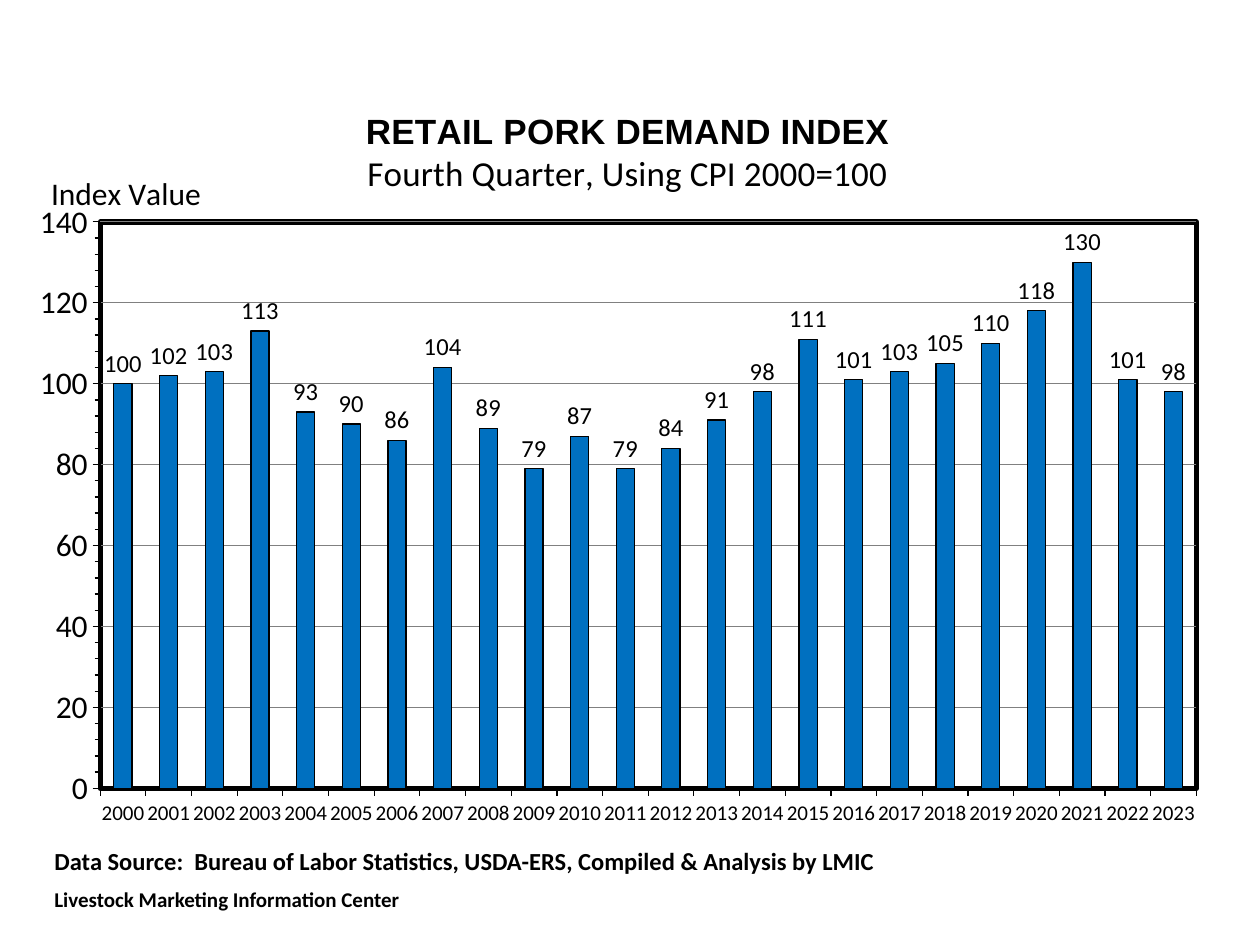
from pptx import Presentation
from pptx.chart.data import CategoryChartData as Data
from pptx.dml.color import RGBColor
from pptx.enum.chart import XL_CHART_TYPE as Kind, XL_LABEL_POSITION as Place, XL_TICK_MARK as Tick
from pptx.enum.text import MSO_AUTO_SIZE as Fit
from pptx.oxml import parse_xml
from pptx.oxml.ns import nsdecls
from pptx.util import Pt

BLACK = RGBColor(0, 0, 0)
WHITE = RGBColor(255, 255, 255)
GRAY = RGBColor(128, 128, 128)
BLUE = RGBColor(0, 112, 192)

YEARS = [str(year) for year in range(2000, 2024)]
INDEX = [100, 102, 103, 113, 93, 90, 86, 104, 89, 79, 87, 79,
         84, 91, 98, 111, 101, 103, 105, 110, 118, 130, 101, 98]


def write(para, text, size=18, face="Calibri", bold=False, before=0):
    para.space_before = Pt(before)
    run = para.add_run()
    run.text = text
    font = run.font
    font.size, font.name, font.bold = Pt(size), face, bold
    font.color.rgb = BLACK


def layout(item, spot, **sizes):
    for old in item.findall("{*}layout"):
        item.remove(old)
    parts = {"xMode": "edge", "yMode": "edge", **sizes}
    tags = "".join(f'<c:{tag} val="{val}"/>' for tag, val in parts.items())
    item.insert(spot, parse_xml(
        f'<c:layout {nsdecls("c")}><c:manualLayout>{tags}</c:manualLayout></c:layout>'))


class Deck:
    def __init__(self, wide, high):
        self.show = Presentation()
        self.show.slide_width, self.show.slide_height = Pt(wide), Pt(high)
        self.slide = self.show.slides.add_slide(self.show.slide_layouts[6])

    def text(self, left, top, wide, high, lines):
        frame = self.slide.shapes.add_textbox(Pt(left), Pt(top), Pt(wide), Pt(high)).text_frame
        frame.word_wrap = True
        frame.auto_size = Fit.SHAPE_TO_FIT_TEXT
        for num, (words, style) in enumerate(lines):
            para = frame.add_paragraph() if num else frame.paragraphs[0]
            write(para, words, **style)

    def chart(self, left, top, wide, high, cats, vals):
        data = Data(number_format="General")
        data.categories = cats
        data.add_series("Retail Pork Demand Index", vals)
        chart = self.slide.shapes.add_chart(
            Kind.COLUMN_CLUSTERED, Pt(left), Pt(top), Pt(wide), Pt(high), data).chart
        chart.has_legend = False
        chart.font.size, chart.font.name = Pt(18), "Calibri"
        chart.font.color.rgb = BLACK
        self.bars(chart.plots[0])
        self.axes(chart)
        self.title(chart)
        self.area(chart)

    def line(self, line, color=BLACK, width=0.75):
        line.color.rgb, line.width = color, Pt(width)

    def bars(self, plot):
        plot.gap_width, plot.vary_by_categories = 150, False
        row = plot.series[0]
        row.format.fill.solid()
        row.format.fill.fore_color.rgb = BLUE
        self.line(row.format.line)
        tags = row.data_labels
        tags.show_value, tags.position = True, Place.OUTSIDE_END
        tags.number_format, tags.number_format_is_linked = "#,##0", False
        tags.font.size, tags.font.name = Pt(14), "Calibri"
        tags.font.color.rgb = BLACK

    def axes(self, chart):
        years, scale = chart.category_axis, chart.value_axis
        for axis in (years, scale):
            axis.major_tick_mark = Tick.OUTSIDE
            self.line(axis.format.line)
        years.tick_labels.font.size = Pt(12)
        scale.minimum_scale, scale.maximum_scale = 0, 140
        scale.major_unit, scale.minor_unit = 20, 4
        scale.minor_tick_mark = Tick.OUTSIDE
        scale.has_major_gridlines = True
        self.line(scale.major_gridlines.format.line, GRAY)
        write(scale.axis_title.text_frame.paragraphs[0], "Index Value")
        head = chart.element.xpath(".//c:valAx/c:title")[0] if hasattr(chart, "element") \
            else chart._chartSpace.xpath(".//c:valAx/c:title")[0]
        body = head.find(".//{*}bodyPr")
        body.set("rot", "0")
        body.set("vert", "horz")
        layout(head, 1, x=0.02, y=0.11)

    def title(self, chart):
        frame = chart.chart_title.text_frame
        write(frame.paragraphs[0], "RETAIL PORK DEMAND INDEX", size=20, face="Arial", bold=True)
        write(frame.add_paragraph(), "Fourth Quarter, Using CPI 2000=100", size=20)
        layout(chart._chartSpace.xpath("./c:chart/c:title")[0], 1, x=0.28, y=0.03)

    def area(self, chart):
        area = chart._chartSpace.xpath(".//c:plotArea")[0]
        layout(area, 0, layoutTarget="inner", x=0.065, y=0.185, w=0.9, h=0.76)
        inner = area.find("{*}layout")[0]
        inner.insert(0, inner.find("{*}layoutTarget"))
        area.append(parse_xml(
            f'<c:spPr {nsdecls("c", "a")}>'
            f'<a:solidFill><a:srgbClr val="{WHITE}"/></a:solidFill>'
            f'<a:ln w="{Pt(3)}"><a:solidFill><a:srgbClr val="{BLACK}"/></a:solidFill></a:ln>'
            '</c:spPr>'))


def main():
    deck = Deck(720, 540)
    deck.chart(12, 48, 696, 426, YEARS, INDEX)
    deck.text(24, 480, 498, 46, [
        ("Data Source:  Bureau of Labor Statistics, USDA-ERS, Compiled & Analysis by LMIC",
         dict(size=14, bold=True)),
        ("Livestock Marketing Information Center", dict(size=12, bold=True, before=6)),
    ])
    deck.show.save("out.pptx")


if __name__ == "__main__":
    main()
